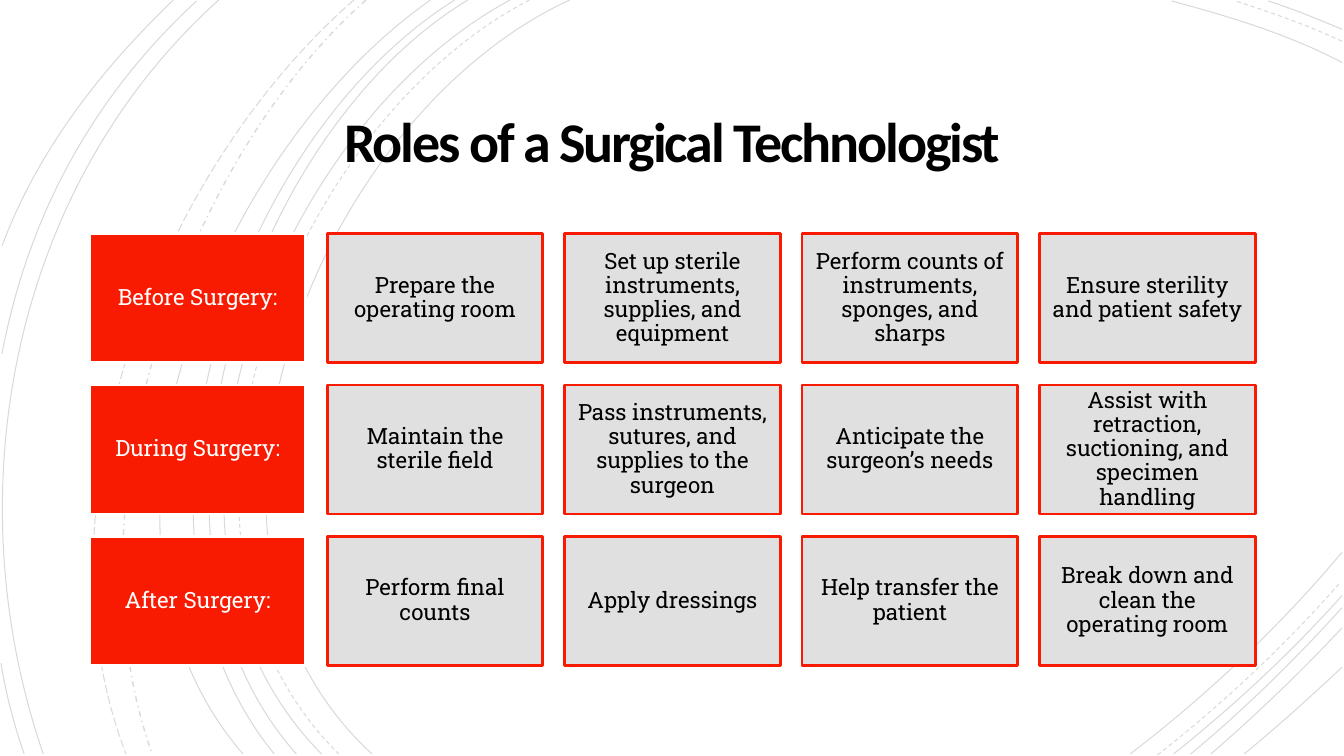
from lxml.etree import SubElement
from pptx import Presentation
from pptx.dml.color import RGBColor
from pptx.enum.dml import MSO_LINE
from pptx.enum.shapes import MSO_SHAPE
from pptx.enum.text import MSO_ANCHOR, PP_ALIGN
from pptx.oxml.ns import qn
from pptx.util import Inches, Pt

# Content
TITLE = "Roles of a Surgical Technologist"
PHASES = [
    ("Before Surgery:", "Prepare the operating room",
     "Set up sterile instruments, supplies, and equipment",
     "Perform counts of instruments, sponges, and sharps",
     "Ensure sterility and patient safety"),
    ("During Surgery:", "Maintain the sterile field",
     "Pass instruments, sutures, and supplies to the surgeon",
     "Anticipate the surgeon’s needs",
     "Assist with retraction, suctioning, and specimen handling"),
    ("After Surgery:", "Perform final counts", "Apply dressings",
     "Help transfer the patient",
     "Break down and clean the operating room"),
]

# Background arcs by dash style: start, two control points, end
ARCS = {
    MSO_LINE.SOLID: [
        [(5.65, 0), (3.15, 1.15), (1.43, 5.4), (3.69, 7.48)],
        [(5.06, 0), (2.7, 1.27), (1.1, 5.37), (3.19, 7.48)],
        [(4.64, 0), (2.44, 1.33), (1.1, 5.41), (2.94, 7.48)],
        [(4.51, 0), (2.31, 1.38), (0.97, 5.33), (2.72, 7.48)],
        [(4.27, 0), (2.17, 1.47), (0.53, 5.29), (2.41, 7.48)],
        [(2.17, 0), (0.11, 1.85), (-0.46, 4.9), (0.43, 7.48)],
        [(1.95, 0.01), (0.92, 0.96), (0.28, 2.14), (0.02, 3.51)],
        [(1.72, 0), (1, 0.69), (0.37, 1.5), (0.02, 2.44)],
        [(0.01, 6.58), (0.06, 6.89), (0.14, 7.19), (0.24, 7.48)],
        [(13.31, 0.62), (12.78, 0.34), (12.18, 0.16), (11.62, 0.01)],
        [(13.31, 0.29), (13.07, 0.19), (12.83, 0.09), (12.58, 0.01)],
        [(11.21, 7.48), (11.97, 6.9), (12.69, 6.22), (13.31, 5.48)],
        [(11.64, 7.48), (12.23, 7.01), (12.8, 6.48), (13.31, 5.91)],
        [(11.81, 7.48), (12.34, 7.04), (12.84, 6.55), (13.31, 6.03)],
        [(12.01, 7.48), (12.46, 7.09), (12.9, 6.67), (13.31, 6.23)],
        [(12.34, 7.48), (12.67, 7.21), (12.99, 6.92), (13.31, 6.62)],
    ],
    MSO_LINE.DASH: [
        [(5.25, 0), (2.85, 1.25), (1.23, 5.37), (3.36, 7.48)],
        [(13.31, 0.41), (12.97, 0.25), (12.6, 0.12), (12.25, 0.01)],
        [(11.48, 7.49), (12.13, 6.98), (12.75, 6.4), (13.3, 5.77)],
    ],
    MSO_LINE.DASH_DOT: [
        [(3.63, 0), (1.76, 1.66), (0.65, 5.09), (1.51, 7.48)],
    ],
    MSO_LINE.LONG_DASH: [
        [(3.51, 0), (1.57, 1.69), (0.29, 4.99), (1.25, 7.48)],
    ],
}

RED = RGBColor(0xF8, 0x1B, 0x02)
GREY = RGBColor(0xE0, 0xE0, 0xE0)
WHITE = RGBColor(0xFF, 0xFF, 0xFF)
BLACK = RGBColor(0, 0, 0)

# Grid, in inches
GRID_LEFT, GRID_TOP, GRID_RIGHT = 0.89, 2.32, 12.45
CARD_WIDTH, CARD_HEIGHT, ROW_PITCH = 2.14, 1.28, 1.5
COLUMN_PITCH = (GRID_RIGHT - GRID_LEFT - CARD_WIDTH) / (len(PHASES[0]) - 1)


def add_arc(slide, controls, dash):
    start, *rest = [(Inches(x), Inches(y)) for x, y in controls]
    builder = slide.shapes.build_freeform(*start)
    builder.add_line_segments(rest, close=False)
    arc = builder.convert_to_shape()
    arc.shadow.inherit = False
    arc.fill.background()
    arc.line.color.rgb = BLACK
    arc.line.width = Pt(1 if dash == MSO_LINE.DASH_DOT else 0.75)
    arc.line.dash_style = dash
    # Line opacity
    colour = arc.line._ln.find(".//" + qn("a:srgbClr"))
    SubElement(colour, qn("a:alpha")).set("val", "15000")
    # Turn the three segments into one Bezier curve
    outline = arc._element.find(".//" + qn("a:path"))
    curve = SubElement(outline, qn("a:cubicBezTo"))
    for segment in outline.findall(qn("a:lnTo")):
        curve.append(segment[0])
        outline.remove(segment)


def write(shape, text, font, size, colour, inset, spacing):
    frame = shape.text_frame
    frame.text = text
    frame.word_wrap = True
    frame.vertical_anchor = MSO_ANCHOR.MIDDLE
    frame.margin_left = frame.margin_right = Inches(inset)
    frame.margin_top = frame.margin_bottom = Inches(inset)
    paragraph = frame.paragraphs[0]
    paragraph.alignment = PP_ALIGN.CENTER
    paragraph.line_spacing = spacing
    run = paragraph.runs[0]
    run.font.name = font
    run.font.size = Pt(size)
    run.font.color.rgb = colour
    return run


def add_card(slide, row, column, text):
    card = slide.shapes.add_shape(
        MSO_SHAPE.RECTANGLE,
        Inches(GRID_LEFT + column * COLUMN_PITCH),
        Inches(GRID_TOP + row * ROW_PITCH),
        Inches(CARD_WIDTH), Inches(CARD_HEIGHT))
    fill, border, ink = (GREY, RED, BLACK) if column else (RED, WHITE, WHITE)
    card.shadow.inherit = False
    card.fill.solid()
    card.fill.fore_color.rgb = fill
    card.line.color.rgb = border
    card.line.width = Pt(2)
    write(card, text, "Roboto Slab", 16, ink, 0.07, 0.9)


def main():
    prs = Presentation()
    prs.slide_width, prs.slide_height = Inches(13.33), Inches(7.5)
    slide = prs.slides.add_slide(prs.slide_layouts[6])

    # Background arcs
    for dash, arcs in ARCS.items():
        for controls in arcs:
            add_arc(slide, controls, dash)

    # Title
    heading = slide.shapes.add_textbox(
        Inches(1.92), Inches(0.87), Inches(9.49), Inches(1.15))
    title_run = write(heading, TITLE, "Calibri", 40, BLACK, 0.25, 0.85)
    title_run.font.bold = True
    title_run.font._element.set("spc", "-150")

    # Phase labels and their tasks
    for row, phase in enumerate(PHASES):
        for column, text in enumerate(phase):
            add_card(slide, row, column, text)

    prs.save("out.pptx")


if __name__ == "__main__":
    main()
